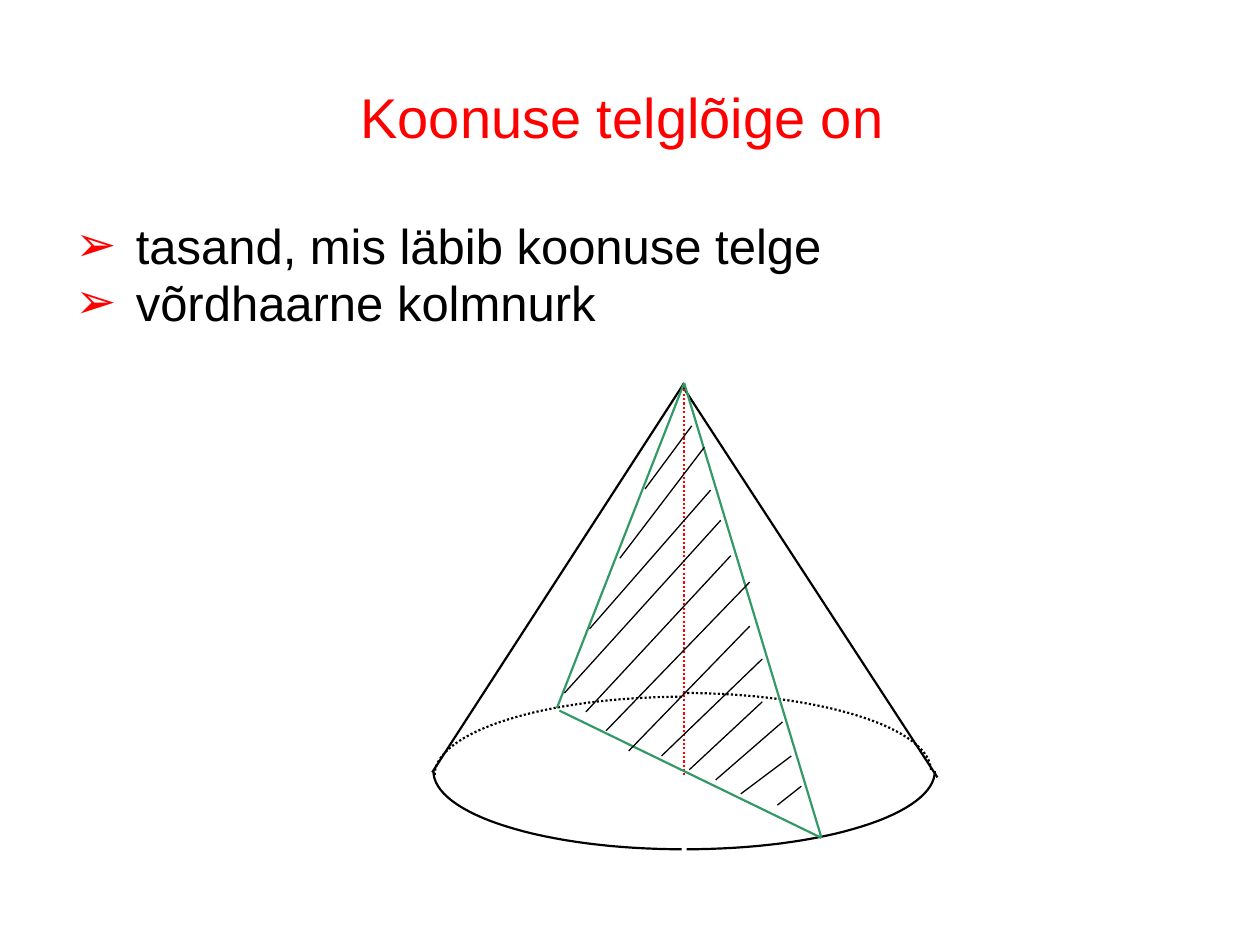
from math import cos, radians, sin
from typing import NamedTuple

from lxml import etree
from pptx import Presentation
from pptx import util as u
from pptx.dml import color as clr
from pptx.enum import dml, shapes, text
from pptx.oxml import ns

HUES = {"red": "FF0000", "black": "000000", "green": "339966"}
FONT = "Arial"
STEPS = 32


class Pen(NamedTuple):
    hue: str
    width: float = 1.25
    dotted: bool = False


class Edge(NamedTuple):
    x1: float
    y1: float
    x2: float
    y2: float
    pen: Pen


class Arc(NamedTuple):
    x: float
    y: float
    start: int
    pen: Pen


RADII = (1.97, 0.62)
SOLID = Pen("black")
DOTS = Pen("black", dotted=True)
AXIS = Pen("red", dotted=True)
CUT = Pen("green")
HATCH = Pen("black", 0.75)

ARCS = [
    Arc(5.42, 6.12, 270, DOTS),
    Arc(5.42, 6.15, 180, DOTS),
    Arc(5.45, 6.12, 0, SOLID),
    Arc(5.41, 6.12, 90, SOLID),
]
EDGES = [
    Edge(5.43, 3.04, 3.43, 6.13, SOLID),
    Edge(5.42, 3.07, 7.44, 6.17, SOLID),
    Edge(5.43, 3.09, 5.43, 6.15, AXIS),
    Edge(5.43, 3.04, 4.42, 5.62, CUT),
    Edge(5.43, 3.04, 6.52, 6.65, CUT),
    Edge(4.44, 5.64, 6.52, 6.65, CUT),
]
STROKES = [
    (5.49, 3.38, 5.12, 3.88),
    (5.59, 3.55, 4.92, 4.43),
    (5.64, 3.89, 4.68, 4.99),
    (5.72, 4.13, 4.48, 5.5),
    (5.8, 4.41, 4.65, 5.65),
    (5.95, 4.62, 4.81, 5.8),
    (5.95, 4.97, 4.99, 5.96),
    (6.05, 5.23, 5.25, 6),
    (6.05, 5.57, 5.47, 6.11),
    (6.21, 5.73, 5.68, 6.19),
    (6.28, 6, 5.88, 6.3),
    (6.36, 6.24, 6.17, 6.39),
]


def set_pen(line, pen: Pen) -> None:
    line.color.rgb = clr.RGBColor.from_string(HUES[pen.hue])
    line.width = u.Pt(pen.width)
    if pen.dotted:
        line.dash_style = dml.MSO_LINE.ROUND_DOT


def draw_arc(group, arc: Arc) -> None:
    angles = [radians(arc.start + 90 * i / STEPS) for i in range(STEPS + 1)]
    points = [
        (u.Inches(arc.x + RADII[0] * cos(a)), u.Inches(arc.y + RADII[1] * sin(a)))
        for a in angles
    ]
    pencil = group.shapes.build_freeform(*points[0])
    pencil.add_line_segments(points[1:], close=False)
    curve = pencil.convert_to_shape()
    curve.shadow.inherit = False
    curve.fill.background()
    set_pen(curve.line, arc.pen)


def draw_edge(group, edge: Edge) -> None:
    ends = [u.Inches(v) for v in edge[:4]]
    line = group.shapes.add_connector(shapes.MSO_CONNECTOR.STRAIGHT, *ends)
    set_pen(line.line, edge.pen)
    etree.SubElement(line._element.spPr, ns.qn("a:effectLst"))


def add_text(slide, box: tuple, words: str, size: int, hue: str):
    frame = slide.shapes.add_textbox(*[u.Inches(v) for v in box]).text_frame
    frame.word_wrap = True
    frame.text = words
    for para in frame.paragraphs:
        font = para.runs[0].font
        font.name = FONT
        font.size = u.Pt(size)
        font.color.rgb = clr.RGBColor.from_string(HUES[hue])
    return frame


def add_bullet(para) -> None:
    para.line_spacing = 0.8
    para.space_before = u.Pt(5.6)
    props = para._p.get_or_add_pPr()
    props.set("marL", str(u.Inches(0.48)))
    props.set("indent", str(u.Inches(-0.48)))
    tint = etree.SubElement(props, ns.qn("a:buClr"))
    etree.SubElement(tint, ns.qn("a:srgbClr"), val=HUES["red"])
    etree.SubElement(props, ns.qn("a:buFont"), typeface=FONT)
    etree.SubElement(props, ns.qn("a:buChar"), char="➢")


def main() -> None:
    deck = Presentation()
    deck.slide_width, deck.slide_height = u.Inches(10), u.Inches(7.5)
    slide = deck.slides.add_slide(deck.slide_layouts[6])

    title = add_text(slide, (0.5, 0.3, 9, 1.25), "Koonuse telglõige on", 32, "red")
    title.vertical_anchor = text.MSO_ANCHOR.MIDDLE
    title.margin_right = u.Inches(0.22)
    title.paragraphs[0].alignment = text.PP_ALIGN.CENTER

    words = "tasand, mis läbib koonuse telge\nvõrdhaarne kolmnurk"
    body = add_text(slide, (0.5, 1.75, 9, 0.98), words, 28, "black")
    for para in body.paragraphs:
        add_bullet(para)

    cone = slide.shapes.add_group_shape()
    for arc in ARCS:
        draw_arc(cone, arc)
    for edge in EDGES + [Edge(*ends, HATCH) for ends in STROKES]:
        draw_edge(cone, edge)

    deck.save("out.pptx")


if __name__ == "__main__":
    main()
